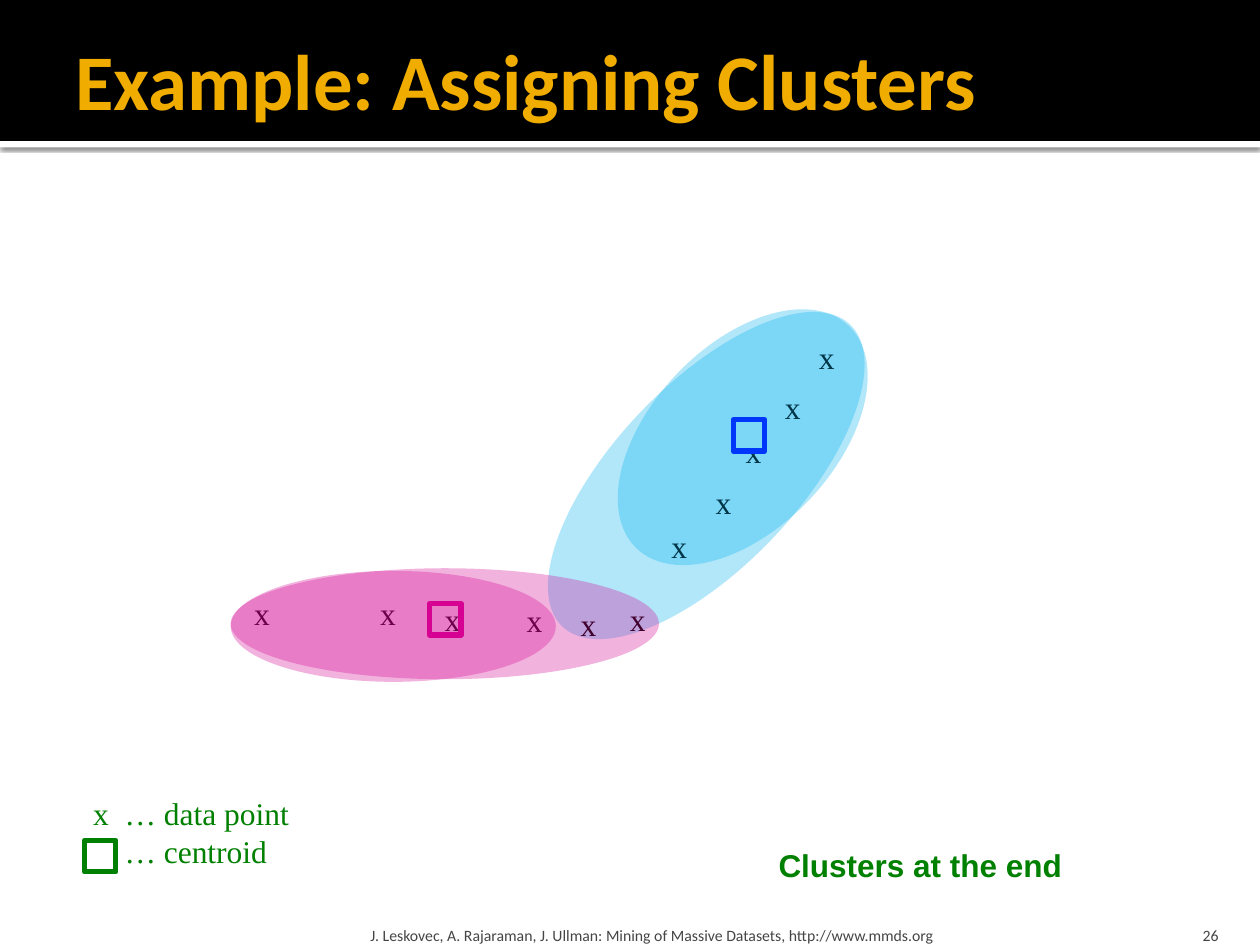
from lxml.etree import SubElement
from pptx import Presentation
from pptx.dml.color import RGBColor
from pptx.enum.shapes import MSO_SHAPE
from pptx.enum.text import MSO_ANCHOR, PP_ALIGN
from pptx.oxml.ns import qn
from pptx.util import Pt

BLACK = RGBColor(0, 0, 0)
WHITE = RGBColor(255, 255, 255)
GOLD = RGBColor(0xF0, 0xAD, 0x00)
GREY = RGBColor(0x45, 0x45, 0x45)
GREEN = RGBColor(0x00, 0x80, 0x00)
BLUE = RGBColor(0x00, 0x00, 0xFF)
SKY = RGBColor(0x00, 0xB0, 0xF0)
PINK = RGBColor(0xD6, 0x00, 0x93)

SERIF = "Times New Roman"
SANS = "Calibri"
PAD = (7.2, 3.6, 7.2, 3.6)
POINTS = [
    (293.8, 339.8), (460.8, 189.4), (247, 339.1), (419, 243.4),
    (210.2, 336.2), (376.6, 297.4), (138.2, 336.2), (352.8, 339.1),
    (401.8, 272.2), (441.4, 218.2),
]
LAST = (324.7, 342)


class Painter:
    def __init__(self, slide):
        self.shapes = slide.shapes

    def shape(self, kind, place):
        shape = self.shapes.add_shape(kind, *map(Pt, place))
        shape.shadow.inherit = False
        shape.line.fill.background()
        return shape

    def band(self, place, color):
        band = self.shape(MSO_SHAPE.RECTANGLE, place)
        band.fill.solid()
        band.fill.fore_color.rgb = color
        return band

    def shade(self, shape):
        effects = shape._element.spPr.find(qn("a:effectLst"))
        shadow = SubElement(
            effects, qn("a:outerShdw"), blurRad=str(Pt(2.5)),
            dist=str(Pt(0.8)), dir="5400000", algn="tl", rotWithShape="0")
        color = SubElement(shadow, qn("a:srgbClr"), val=str(BLACK))
        SubElement(color, qn("a:alpha"), val="60000")

    def cluster(self, place, color, turn=0):
        oval = self.shape(MSO_SHAPE.OVAL, place)
        oval.fill.solid()
        oval.fill.fore_color.rgb = color
        tint = oval._element.spPr.find(qn("a:solidFill"))[0]
        SubElement(tint, qn("a:alpha"), val="30000")
        oval.rotation = turn

    def center(self, left, top, color):
        box = self.shape(MSO_SHAPE.RECTANGLE, (left, top, 18, 18))
        box.fill.background()
        box.line.color.rgb = color
        box.line.width = Pt(3)

    def text(self, place, lines, size, face, color, bold=False,
             align=PP_ALIGN.LEFT, anchor=MSO_ANCHOR.TOP, pad=PAD, wrap=True):
        frame = self.shapes.add_textbox(*map(Pt, place)).text_frame
        frame.word_wrap = wrap
        frame.vertical_anchor = anchor
        (frame.margin_left, frame.margin_top,
         frame.margin_right, frame.margin_bottom) = map(Pt, pad)
        frame.text = lines
        for para in frame.paragraphs:
            para.alignment = align
            font = para.font
            font.size, font.name, font.bold = Pt(size), face, bold
            font.color.rgb = color
        return frame

    def point(self, left, top):
        self.text((left, top, 23.8, 28.8), "x", 18, SERIF, BLACK, wrap=False)

    def legend(self, place, lines, indent):
        frame = self.text(place, lines, 18, SERIF, GREEN)
        for para, first in zip(frame.paragraphs, (-indent, 0)):
            props = para._p.get_or_add_pPr()
            props.set("marL", str(Pt(indent)))
            props.set("indent", str(Pt(first)))


def main():
    deck = Presentation()
    deck.slide_width, deck.slide_height = Pt(720), Pt(540)
    art = Painter(deck.slides.add_slide(deck.slide_layouts[6]))

    art.shade(art.band((0, 80.6, 720, 3.6), WHITE))
    art.band((0, 0, 720, 80.6), BLACK)
    art.cluster((351.4, 152.6, 104.4, 238.3), SKY, 43.6)
    art.text((36, 12.2, 648, 66.2), "Example: Assigning Clusters", 45, SANS,
             GOLD, bold=True, anchor=MSO_ANCHOR.MIDDLE,
             pad=(7.2, 3.6, 3.6, 3.6))
    art.text((208, 518.4, 433.4, 21.6),
             "J. Leskovec, A. Rajaraman, J. Ullman: "
             "Mining of Massive Datasets, http://www.mmds.org",
             9, SANS, GREY, anchor=MSO_ANCHOR.BOTTOM, pad=(3.6, 3.6, 3.6, 0))
    art.text((645.8, 518.4, 57.6, 21.6), "26", 9, SANS, GREY,
             align=PP_ALIGN.RIGHT, anchor=MSO_ANCHOR.BOTTOM,
             pad=(7.2, 3.6, 7.2, 0))

    for spot in POINTS:
        art.point(*spot)
    art.legend((46.1, 450, 127.4, 51.1), "x\t… data point\n… centroid", 18)
    art.center(48.2, 480.2, GREEN)
    art.center(419, 239.8, BLUE)
    art.center(245.5, 344.9, PINK)
    art.point(*LAST)

    art.cluster((131.8, 326.2, 185.8, 63.4), PINK)
    art.cluster((131.8, 324.7, 244.8, 63.4), PINK)
    art.cluster((372.2, 162, 104.4, 175.7), SKY, 43.6)
    art.text((437.8, 480.2, 177.8, 28.8), "Clusters at the end", 18, "Arial",
             GREEN, bold=True, wrap=False)

    deck.save("out.pptx")


if __name__ == "__main__":
    main()
